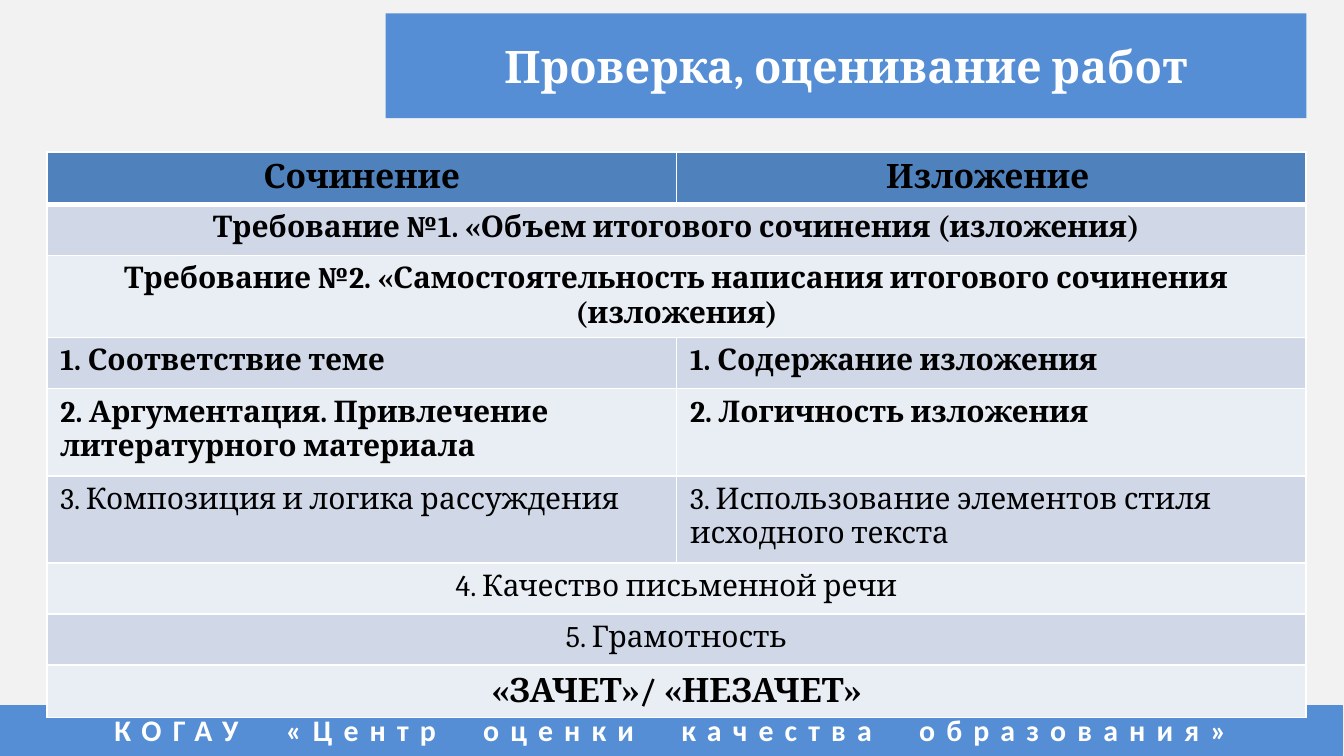
from pptx import Presentation
from pptx.dml.color import RGBColor
from pptx.enum.shapes import MSO_SHAPE
from pptx.enum.text import MSO_ANCHOR, PP_ALIGN
from pptx.oxml import parse_xml
from pptx.oxml.ns import nsdecls
from pptx.util import Inches, Pt

RECT = MSO_SHAPE.RECTANGLE
TOP, MIDDLE = MSO_ANCHOR.TOP, MSO_ANCHOR.MIDDLE
LEFT, CENTER = PP_ALIGN.LEFT, PP_ALIGN.CENTER
TITLE_ONLY = 5

COLORS = {
    "background": "F2F2F2",
    "accent": "558ED5",
    "header": "4F81BD",
    "odd": "D0D8E8",
    "even": "E9EDF4",
    "white": "FFFFFF",
    "black": "000000",
}

# Row height, cell texts (one text spans both columns), size, bold
ROWS = [
    (0.39, ["Сочинение", "Изложение "], 18, True),
    (0.38, ["Требование №1. «Объем итогового сочинения (изложения)"], 16, True),
    (0.42, ["Требование №2. «Самостоятельность написания итогового сочинения (изложения)"], 16, True),
    (0.38, ["1. Соответствие теме", "1. Содержание изложения"], 16, True),
    (0.65, ["2. Аргументация. Привлечение литературного материала",
            "2. Логичность изложения"], 16, True),
    (0.65, ["3. Композиция и логика рассуждения",
            "3. Использование элементов стиля исходного текста"], 16, False),
    (0.38, ["4. Качество письменной речи"], 16, False),
    (0.38, ["5. Грамотность"], 16, False),
    (0.39, ["«ЗАЧЕТ»/ «НЕЗАЧЕТ»"], 18, True),
]


def rgb(name):
    return RGBColor.from_string(COLORS[name])


class SlideBuilder:
    def __init__(self, slide):
        self.slide = slide
        self.text_font = "Cambria"
        self.footer_font = "Calibri"
        fill = slide.background.fill
        fill.solid()
        fill.fore_color.rgb = rgb("background")

    def style(self, p, size, color, bold=True, align=CENTER, font=None):
        p.alignment = align
        p.font.name = font or self.text_font
        p.font.size = Pt(size)
        p.font.bold = bold
        p.font.color.rgb = rgb(color)

    def title(self, text, left, top, width, height):
        sp = self.slide.shapes.title
        sp.left, sp.top = Inches(left), Inches(top)
        sp.width, sp.height = Inches(width), Inches(height)
        sp.fill.solid()
        sp.fill.fore_color.rgb = rgb("accent")
        tf = sp.text_frame
        tf.text = text
        tf.vertical_anchor = MIDDLE
        self.style(tf.paragraphs[0], 24, "white")

    def footer(self, text, left, top, width, height):
        """Add a band of letter-spaced text with wider gaps between words."""
        sp = self.slide.shapes.add_shape(
            RECT, Inches(left), Inches(top), Inches(width), Inches(height))
        sp.shadow.inherit = False
        sp.fill.solid()
        sp.fill.fore_color.rgb = rgb("accent")
        sp.line.color.rgb = rgb("accent")
        sp.line.width = Pt(0.75)
        tf = sp.text_frame
        tf.word_wrap = True
        tf.vertical_anchor = TOP
        p = tf.paragraphs[0]
        self.style(p, 16, "white", font=self.footer_font)
        for i, word in enumerate(text.split()):
            pieces = [(word, 600)] if i == 0 else [(" ", 1560), (word, 600)]
            for piece, spacing in pieces:
                r = p.add_run()
                r.text = piece
                r.font._element.set("spc", str(spacing))

    def borders(self, cell, top=1, bottom=1):
        tc_pr = cell._tc.get_or_add_tcPr()
        for side, width in (("L", 1), ("R", 1), ("T", top), ("B", bottom)):
            tc_pr.append(parse_xml(
                f'<a:ln{side} {nsdecls("a")} w="{Pt(width)}"><a:solidFill>'
                f'<a:srgbClr val="{COLORS["white"]}"/></a:solidFill></a:ln{side}>'))

    def table(self, rows, left, top, width):
        height = sum(row[0] for row in rows)
        table = self.slide.shapes.add_table(
            len(rows), 2, Inches(left), Inches(top),
            Inches(width), Inches(height)).table
        for i, (row_height, texts, size, bold) in enumerate(rows):
            table.rows[i].height = Inches(row_height)
            fill_name = "header" if i == 0 else ("odd" if i % 2 else "even")
            for cell in table.rows[i].cells:
                self.borders(cell, top=3 if i == 1 else 1, bottom=3 if i == 0 else 1)
                cell.fill.solid()
                cell.fill.fore_color.rgb = rgb(fill_name)
            spans = len(texts) == 1
            if spans:
                table.cell(i, 0).merge(table.cell(i, 1))
            align = CENTER if spans or i == 0 else LEFT
            for j, text in enumerate(texts):
                cell = table.cell(i, j)
                cell.text = text
                self.style(cell.text_frame.paragraphs[0], size, "black", bold, align)


def main():
    prs = Presentation()
    prs.slide_width = Inches(10)
    prs.slide_height = Inches(10 * 9 / 16)
    s = SlideBuilder(prs.slides.add_slide(prs.slide_layouts[TITLE_ONLY]))
    s.footer("КОГАУ «Центр оценки качества образования»", -0.01, 5.25, 10, 0.37)
    s.title("Проверка, оценивание работ", 2.87, 0.1, 6.85, 0.78)
    s.table(ROWS, 0.35, 1.13, 9.37)
    prs.save("out.pptx")


if __name__ == "__main__":
    main()
